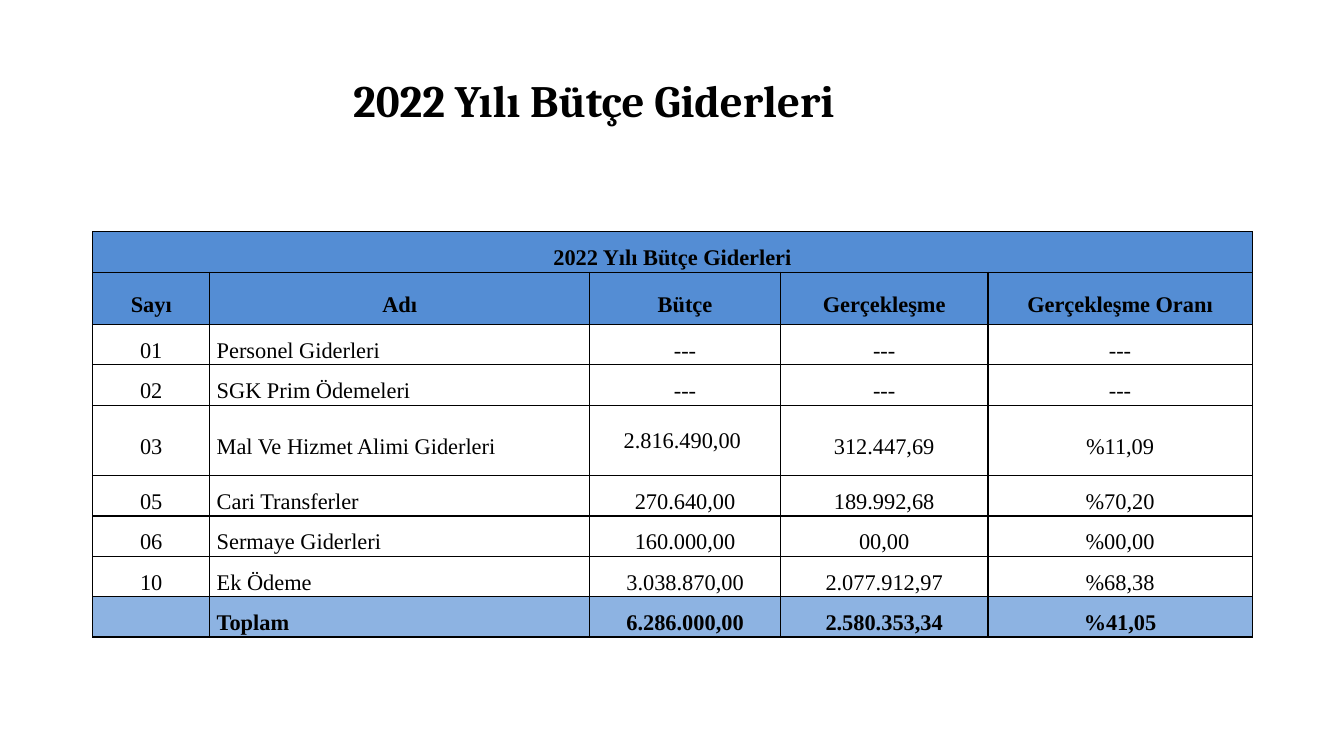
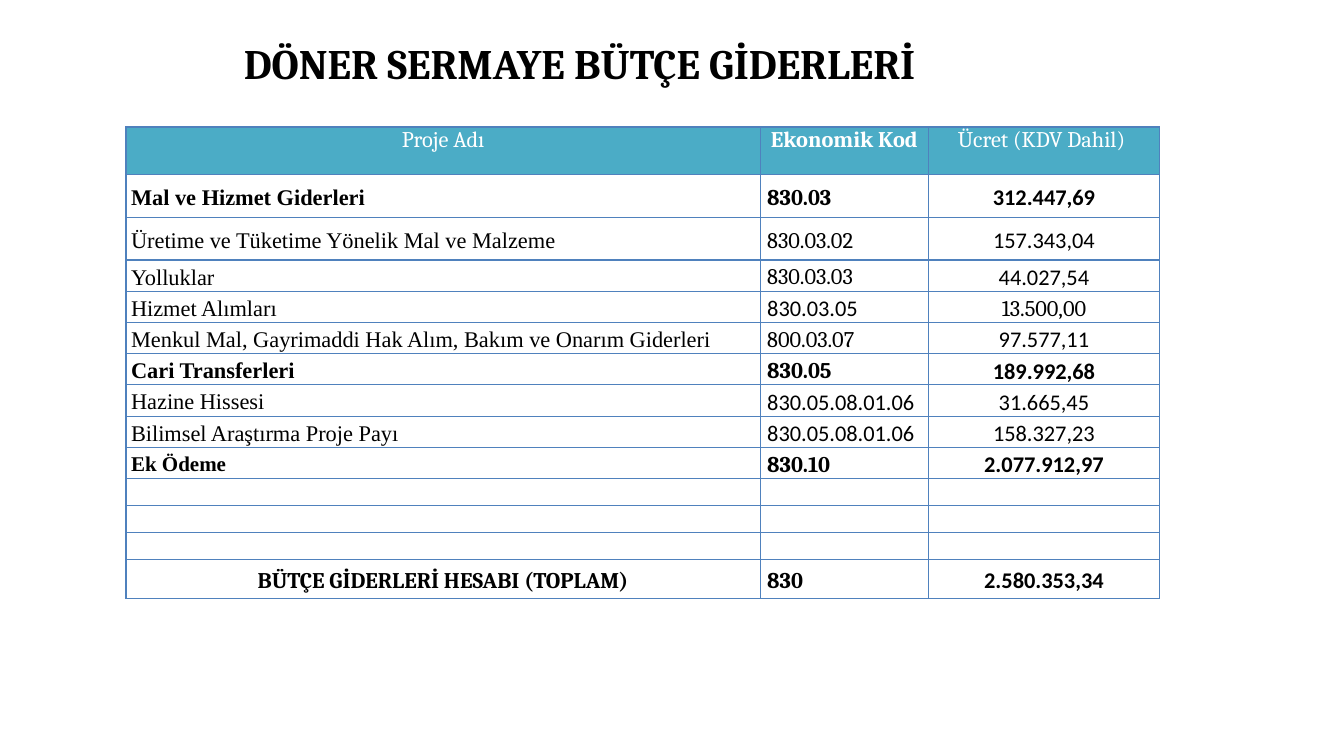
import dataclasses

import lxml.etree
import pptx
import pptx.dml.color
import pptx.enum.text
import pptx.oxml.ns
import pptx.util

Inches = pptx.util.Inches
Pt = pptx.util.Pt
ALIGN = pptx.enum.text.PP_ALIGN
ANCHOR = pptx.enum.text.MSO_ANCHOR


@dataclasses.dataclass(frozen=True)
class Theme:
    ink: str = "000000"
    paper: str = "FFFFFF"
    head_blue: str = "548DD4"
    total_blue: str = "8DB3E2"
    head_teal: str = "4BACC6"
    grid_blue: str = "4F81BD"
    serif: str = "Cambria"
    roman: str = "Times New Roman"
    sans: str = "Calibri"
    title_size: int = 32
    long_title_size: int = 30
    body_size: int = 16
    small_size: int = 15


THEME = Theme()


@dataclasses.dataclass(frozen=True)
class Look:
    font: str = THEME.roman
    size: int = THEME.body_size
    color: str = THEME.ink
    bold: bool = False
    align: ALIGN = ALIGN.CENTER
    anchor: ANCHOR = ANCHOR.MIDDLE
    spacing: float = 1.5
    after: int = 8
    inset: float = 0.07
    fill: str = ""


def rgb(code):
    return pptx.dml.color.RGBColor.from_string(code)


def format_paragraph(paragraph, look):
    paragraph.alignment = look.align
    paragraph.line_spacing = look.spacing
    paragraph.space_after = Pt(look.after)
    for run in paragraph.runs:
        run.font.name = look.font
        run.font.size = Pt(look.size)
        run.font.bold = look.bold
        run.font.color.rgb = rgb(look.color)


def add_title(slide, box, wording, size):
    frame = slide.shapes.add_textbox(*map(Inches, box)).text_frame
    frame.word_wrap = True
    frame.vertical_anchor = ANCHOR.MIDDLE
    frame.text = wording
    format_paragraph(frame.paragraphs[0], Look(THEME.serif, size, bold=True, spacing=0.9, after=0))


def draw_borders(cell, color):
    qn = pptx.oxml.ns.qn
    properties = cell._tc.get_or_add_tcPr()
    for position, side in enumerate(("a:lnL", "a:lnR", "a:lnT", "a:lnB")):
        line = lxml.etree.Element(qn(side), w=str(Pt(1)))
        solid = lxml.etree.SubElement(line, qn("a:solidFill"))
        lxml.etree.SubElement(solid, qn("a:srgbClr"), val=color)
        properties.insert(position, line)


def fill_cell(cell, wording, look, border):
    cell.margin_left = cell.margin_right = Inches(look.inset)
    cell.margin_top = cell.margin_bottom = 0
    cell.vertical_anchor = look.anchor
    if look.fill:
        cell.fill.solid()
        cell.fill.fore_color.rgb = rgb(look.fill)
    else:
        cell.fill.background()
    draw_borders(cell, border)
    paragraph = cell.text_frame.paragraphs[0]
    if wording:
        paragraph.text = wording
        format_paragraph(paragraph, look)
    else:
        lxml.etree.SubElement(
            paragraph._p, pptx.oxml.ns.qn("a:endParaRPr"), sz=str(look.size * 100))


def add_budget_table(slide, corner, widths, heights, rows, look_at, border):
    size = (sum(widths), sum(heights))
    table = slide.shapes.add_table(
        len(rows), len(widths), *map(Inches, corner + size)).table
    table.first_row = table.horz_banding = False
    for column, width in zip(table.columns, widths):
        column.width = Inches(width)
    for line, height in zip(table.rows, heights):
        line.height = Inches(height)
    for r, row in enumerate(rows):
        for c, wording in enumerate(row):
            fill_cell(table.cell(r, c), wording, look_at(r, c, wording), border)
    return table


EXPENSES = [
    ("2022 Yılı Bütçe Giderleri", "", "", "", ""),
    ("Sayı", "Adı", "Bütçe", "Gerçekleşme", "Gerçekleşme Oranı"),
    ("01", "Personel Giderleri", "---", "---", "---"),
    ("02", "SGK Prim Ödemeleri", "---", "---", "---"),
    ("03", "Mal Ve Hizmet Alimi Giderleri", "2.816.490,00 ", "312.447,69", "%11,09"),
    ("05", "Cari Transferler", "270.640,00", "189.992,68", "%70,20"),
    ("06", "Sermaye Giderleri", "160.000,00", "00,00", "%00,00"),
    ("10", "Ek Ödeme", "3.038.870,00", "2.077.912,97", "%68,38"),
    ("", "Toplam", "6.286.000,00", "2.580.353,34", "%41,05"),
]

PROJECTS = [
    ("Proje Adı", "Ekonomik Kod", "Ücret (KDV Dahil) "),
    ("Mal ve Hizmet Giderleri", "830.03", "312.447,69"),
    ("Üretime ve Tüketime Yönelik Mal ve Malzeme", "830.03.02", "157.343,04"),
    ("Yolluklar", "830.03.03", "44.027,54"),
    ("Hizmet Alımları", "830.03.05", "13.500,00"),
    ("Menkul Mal, Gayrimaddi Hak Alım, Bakım ve Onarım Giderleri", "800.03.07", "97.577,11"),
    ("Cari Transferleri", "830.05", "189.992,68"),
    ("Hazine Hissesi", "830.05.08.01.06", "31.665,45"),
    ("Bilimsel Araştırma Proje Payı", "830.05.08.01.06", "158.327,23"),
    ("Ek Ödeme", "830.10", "2.077.912,97"),
    *[("", "", "")] * 3,
    ("BÜTÇE GİDERLERİ HESABI (TOPLAM)", "830", "2.580.353,34"),
]
PROJECT_GROUPS = (1, 6, 9, 13)
PROJECT_EXCEPTIONS = {
    "830.03.05": {"font": THEME.sans},
    "830.05.08.01.06": {"font": THEME.sans},
    "13.500,00": {"font": THEME.serif},
    "Ek Ödeme": {"size": THEME.small_size},
    PROJECTS[-1][0]: {"font": THEME.serif, "align": ALIGN.CENTER, "inset": 0.07},
}


def expense_look(row, column, wording):
    if row < 2:
        return Look(bold=True, fill=THEME.head_blue)
    look = Look(align=ALIGN.LEFT if column == 1 else ALIGN.CENTER)
    if row == len(EXPENSES) - 1:
        return dataclasses.replace(look, bold=True, fill=THEME.total_blue)
    if (row, column) == (4, 2):
        return dataclasses.replace(look, spacing=1.07)
    return look


def project_look(row, column, wording):
    if row == 0:
        return Look(THEME.serif, color=THEME.paper, bold=column == 1, anchor=ANCHOR.TOP,
                    spacing=1.0, after=0, fill=THEME.head_teal)
    look = Look(
        font=(THEME.roman, THEME.serif, THEME.sans)[column],
        bold=row in PROJECT_GROUPS,
        align=ALIGN.CENTER if column == 2 else ALIGN.LEFT,
        spacing=1.15,
        after=10,
        inset=0.05 if column == 0 else 0.07,
    )
    return dataclasses.replace(look, **PROJECT_EXCEPTIONS.get(wording, {}))


def build_expense_slide(slide):
    add_title(slide, (0.14, 0.65, 11.5, 0.74), EXPENSES[0][0], THEME.title_size)
    heights = [0.38, 0.52] + [0.37] * 2 + [0.7] + [0.37] * 4
    table = add_budget_table(slide, (0.92, 2.3), (1.16, 3.77, 1.89, 2.06, 2.62), heights,
                             EXPENSES, expense_look, THEME.ink)
    table.cell(0, 0).merge(table.cell(0, 4))


def build_project_slide(slide):
    add_title(slide, (0, 0.28, 11.5, 0.74), "DÖNER SERMAYE BÜTÇE GİDERLERİ",
              THEME.long_title_size)
    heights = [0.47, 0.43, 0.42] + [0.31] * 7 + [0.25] * 3 + [0.39]
    add_budget_table(slide, (1.25, 1.26), (6.29, 1.67, 2.29), heights,
                     PROJECTS, project_look, THEME.grid_blue)


def main():
    deck = pptx.Presentation()
    deck.slide_width = Inches(13.33)
    deck.slide_height = Inches(7.5)
    for build in (build_expense_slide, build_project_slide):
        build(deck.slides.add_slide(deck.slide_layouts[6]))
    deck.save("out.pptx")


if __name__ == "__main__":
    main()
